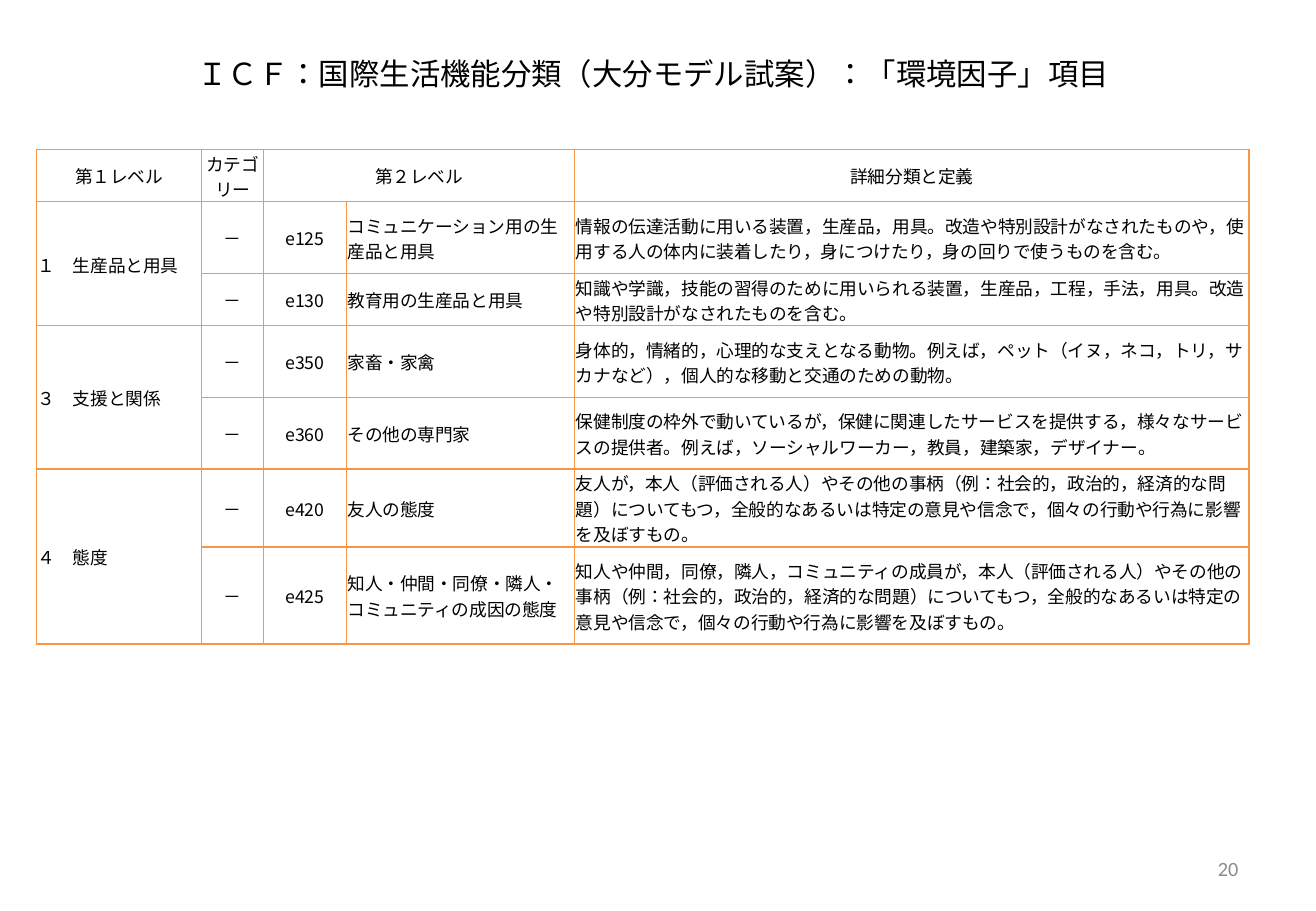
from lxml.etree import SubElement
from pptx import Presentation
from pptx.dml.color import RGBColor
from pptx.enum.lang import MSO_LANGUAGE_ID as LANG
from pptx.enum.text import MSO_ANCHOR as ANCHOR, PP_ALIGN as ALIGN
from pptx.oxml import parse_xml
from pptx.oxml.ns import nsdecls, qn
from pptx.util import Inches, Pt

WIDTH, HEIGHT = 10.83, 7.5
CJK = "Noto Sans CJK JP"
COLUMNS = [1.36, 0.51, 0.68, 1.88, 5.55]
ROWS = [0.43, 0.59, 0.43, 0.59, 0.59, 0.64, 0.8]
HEADER = ["第１レベル", "カテゴリー", "第２レベル", "", "詳細分類と定義"]
FACTORS = [
    ("１　生産品と用具", [
        ("e125", "コミュニケーション用の生産品と用具",
         "情報の伝達活動に用いる装置，生産品，用具。改造や特別設計がなされたものや，"
         "使用する人の体内に装着したり，身につけたり，身の回りで使うものを含む。"),
        ("e130", "教育用の生産品と用具",
         "知識や学識，技能の習得のために用いられる装置，生産品，工程，手法，用具。"
         "改造や特別設計がなされたものを含む。"),
    ]),
    ("３　支援と関係", [
        ("e350", "家畜・家禽",
         "身体的，情緒的，心理的な支えとなる動物。例えば，ペット（イヌ，ネコ，トリ，"
         "サカナなど），個人的な移動と交通のための動物。"),
        ("e360", "その他の専門家",
         "保健制度の枠外で動いているが，保健に関連したサービスを提供する，様々なサービスの提供者。"
         "例えば，ソーシャルワーカー，教員，建築家，デザイナー。"),
    ]),
    ("４　態度", [
        ("e420", "友人の態度",
         "友人が，本人（評価される人）やその他の事柄（例：社会的，政治的，経済的な問題）についてもつ，"
         "全般的なあるいは特定の意見や信念で，個々の行動や行為に影響を及ぼすもの。"),
        ("e425", "知人・仲間・同僚・隣人・コミュニティの成因の態度",
         "知人や仲間，同僚，隣人，コミュニティの成員が，本人（評価される人）やその他の事柄"
         "（例：社会的，政治的，経済的な問題）についてもつ，全般的なあるいは特定の意見や信念で，"
         "個々の行動や行為に影響を及ぼすもの。"),
    ]),
]


def rgb(value):
    return RGBColor.from_string(value)


def write(tf, text, size=10.5, font=CJK, color="000000", align=ALIGN.LEFT):
    p = tf.paragraphs[0]
    p.alignment = align
    r = p.add_run()
    r.text = text
    r.font.size = Pt(size)
    r.font.name = font
    r.font.bold = False
    r.font.color.rgb = rgb(color)
    r.font.language_id = LANG.JAPANESE
    latin = r.font._element.find(qn("a:latin"))
    ea = SubElement(r.font._element, qn("a:ea"), typeface=font)
    latin.addnext(ea)


def place(sp, left, top, width, height):
    sp.left, sp.top = Inches(left), Inches(top)
    sp.width, sp.height = Inches(width), Inches(height)


def border(cell, color="F79646", width=1):
    tcPr = cell._tc.get_or_add_tcPr()
    for i, side in enumerate("LRTB"):
        tcPr.insert(i, parse_xml(
            f'<a:ln{side} {nsdecls("a")} w="{Pt(width)}"><a:solidFill>'
            f'<a:srgbClr val="{color}"/></a:solidFill></a:ln{side}>'))


def add_title(s, text):
    sp = s.shapes.title
    place(sp, 0.13, 0.4, WIDTH - 0.34, 0.4)
    sp.text_frame.word_wrap = True
    sp.text_frame.vertical_anchor = ANCHOR.MIDDLE
    write(sp.text_frame, text, size=18, align=ALIGN.CENTER)


def add_page_number(s, text):
    sp = s.shapes.add_textbox(0, 0, 0, 0)
    place(sp, 7.76, 6.95, 2.53, 0.4)
    tf = sp.text_frame
    tf.word_wrap = True
    tf.vertical_anchor = ANCHOR.MIDDLE
    write(tf, text, size=12, font="Calibri", color="8C8C8C", align=ALIGN.RIGHT)


def table_rows():
    rows = [HEADER]
    for level, items in FACTORS:
        for i, item in enumerate(items):
            rows.append(["" if i else level, "－", *item])
    return rows


def add_factor_table(s):
    frame = s.shapes.add_table(len(ROWS), len(COLUMNS), Inches(0.3), Inches(1.23),
                               Inches(sum(COLUMNS)), Inches(sum(ROWS)))
    table = frame.table
    table.first_row = table.horz_banding = False
    for column, width in zip(table.columns, COLUMNS):
        column.width = Inches(width)
    for row, height in zip(table.rows, ROWS):
        row.height = Inches(height)
    for y, texts in enumerate(table_rows()):
        for x, text in enumerate(texts):
            cell = table.cell(y, x)
            cell.fill.background()
            border(cell)
            cell.vertical_anchor = ANCHOR.MIDDLE
            cell.margin_left = cell.margin_right = cell.margin_top = Inches(0.01)
            cell.margin_bottom = 0
            if text:
                centred = y == 0 or x in (1, 2)
                write(cell.text_frame, text, align=ALIGN.CENTER if centred else ALIGN.LEFT)
    table.cell(0, 2).merge(table.cell(0, 3))
    top = 1
    for level, items in FACTORS:
        bottom = top + len(items) - 1
        table.cell(top, 0).merge(table.cell(bottom, 0))
        top = bottom + 1


def main():
    prs = Presentation()
    prs.slide_width, prs.slide_height = Inches(WIDTH), Inches(HEIGHT)
    s = prs.slides.add_slide(prs.slide_layouts[5])
    add_factor_table(s)
    add_title(s, "ＩＣＦ：国際生活機能分類（大分モデル試案）：「環境因子」項目")
    add_page_number(s, "20")
    prs.save("out.pptx")


if __name__ == "__main__":
    main()
